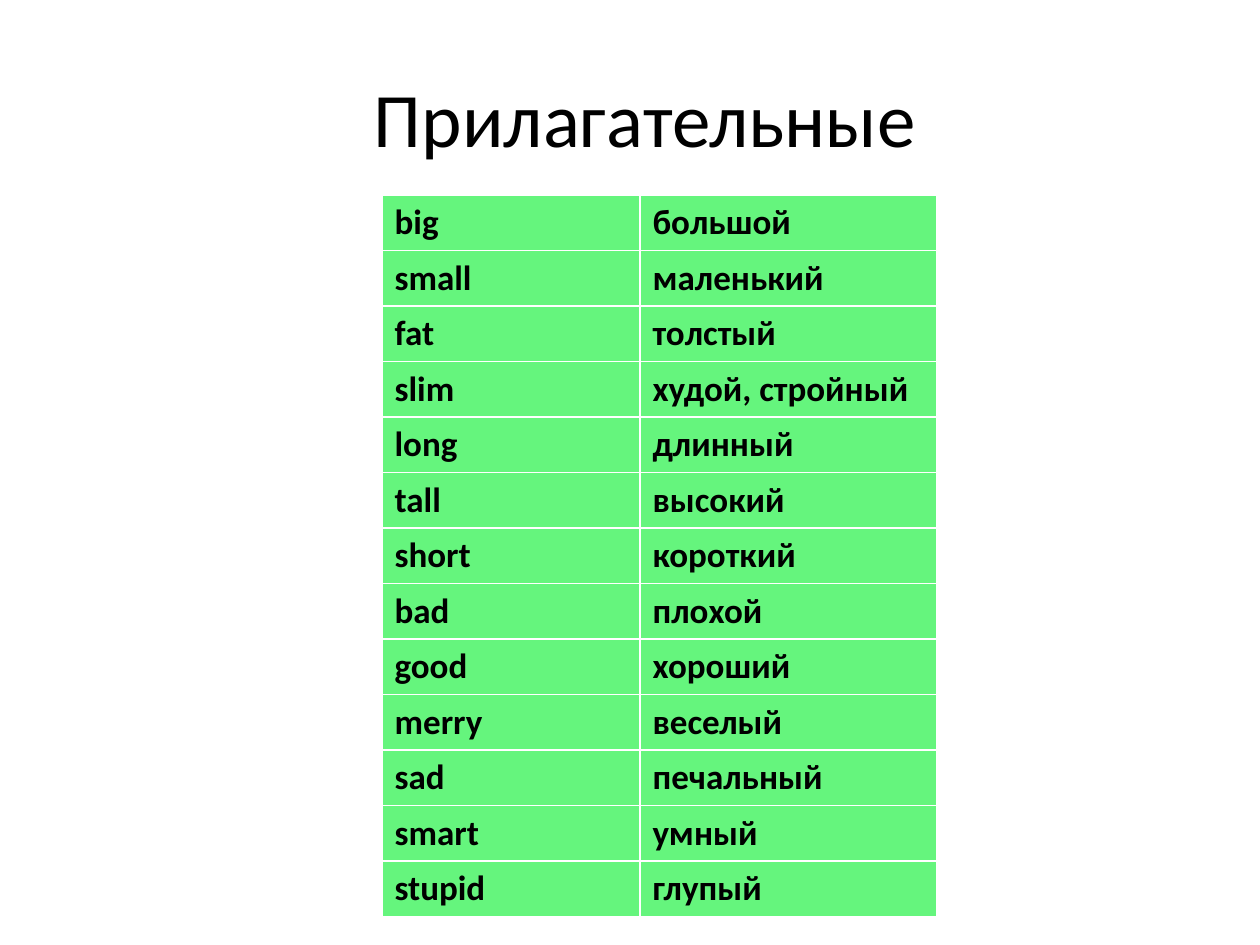
import dataclasses

import lxml.etree
import pptx
import pptx.dml.color
import pptx.enum.text
import pptx.oxml.ns
import pptx.util

PX_PER_INCH = 126
EMU_PER_INCH = 914400

ADJECTIVES = [
    ("big", "большой"),
    ("small", "маленький"),
    ("fat", "толстый"),
    ("slim", "худой, стройный"),
    ("long", "длинный"),
    ("tall", "высокий"),
    ("short", "короткий"),
    ("bad", "плохой"),
    ("good", "хороший"),
    ("merry", "веселый"),
    ("sad", "печальный"),
    ("smart", "умный"),
    ("stupid", "глупый"),
]


@dataclasses.dataclass(frozen=True)
class Theme:
    font: str = "Calibri"
    text: str = "000000"
    cell: str = "65F57D"
    border: str = "FFFFFF"
    title_size: int = 44
    cell_size: int = 20
    border_width: int = 1


def emu(px):
    return pptx.util.Emu(round(px * EMU_PER_INCH / PX_PER_INCH))


def set_attributes(target, values):
    for name, value in values.items():
        setattr(target, name, value)


class SlideBuilder:
    def __init__(self, theme, slide):
        self.theme = theme
        self.slide = slide

    def format_font(self, font, size, bold):
        set_attributes(font, {"name": self.theme.font, "size": pptx.util.Pt(size), "bold": bold})
        font.color.rgb = pptx.dml.color.RGBColor.from_string(self.theme.text)

    def add_title(self, text, left, top, width, height):
        title = self.slide.shapes.title
        box = {"left": left, "top": top, "width": width, "height": height}
        set_attributes(title, {name: emu(px) for name, px in box.items()})
        title.text_frame.vertical_anchor = pptx.enum.text.MSO_ANCHOR.MIDDLE
        paragraph = title.text_frame.paragraphs[0]
        paragraph.alignment = pptx.enum.text.PP_ALIGN.CENTER
        run = paragraph.add_run()
        run.text = text
        self.format_font(run.font, self.theme.title_size, False)

    def add_borders(self, cell):
        qn = pptx.oxml.ns.qn
        properties = cell._tc.get_or_add_tcPr()
        width = str(pptx.util.Pt(self.theme.border_width))
        for side in ("a:lnL", "a:lnR", "a:lnT", "a:lnB"):
            line = lxml.etree.SubElement(properties, qn(side), w=width)
            fill = lxml.etree.SubElement(line, qn("a:solidFill"))
            lxml.etree.SubElement(fill, qn("a:srgbClr"), val=self.theme.border)

    def fill_cell(self, cell, text):
        self.add_borders(cell)
        cell.fill.solid()
        cell.fill.fore_color.rgb = pptx.dml.color.RGBColor.from_string(self.theme.cell)
        run = cell.text_frame.paragraphs[0].add_run()
        run.text = text
        self.format_font(run.font, self.theme.cell_size, True)

    def add_table(self, rows, left, top, column_widths, row_height):
        frame = self.slide.shapes.add_table(
            len(rows), len(column_widths), emu(left), emu(top),
            emu(sum(column_widths)), emu(row_height * len(rows)),
        )
        table = frame.table
        set_attributes(table, {"first_row": False, "horz_banding": False})
        for column, width in zip(table.columns, column_widths):
            column.width = emu(width)
        for row, texts in zip(table.rows, rows):
            row.height = emu(row_height)
            for cell, text in zip(row.cells, texts):
                self.fill_cell(cell, text)


def main():
    presentation = pptx.Presentation()
    set_attributes(presentation, {"slide_width": emu(1260), "slide_height": emu(945)})
    slide = presentation.slides.add_slide(presentation.slide_layouts.get_by_name("Title Only"))
    builder = SlideBuilder(Theme(), slide)
    builder.add_title("Прилагательные", 94, 38, 1102, 158)
    builder.add_table(ADJECTIVES, 382, 195, (258, 297), 52)
    presentation.save("out.pptx")


if __name__ == "__main__":
    main()
